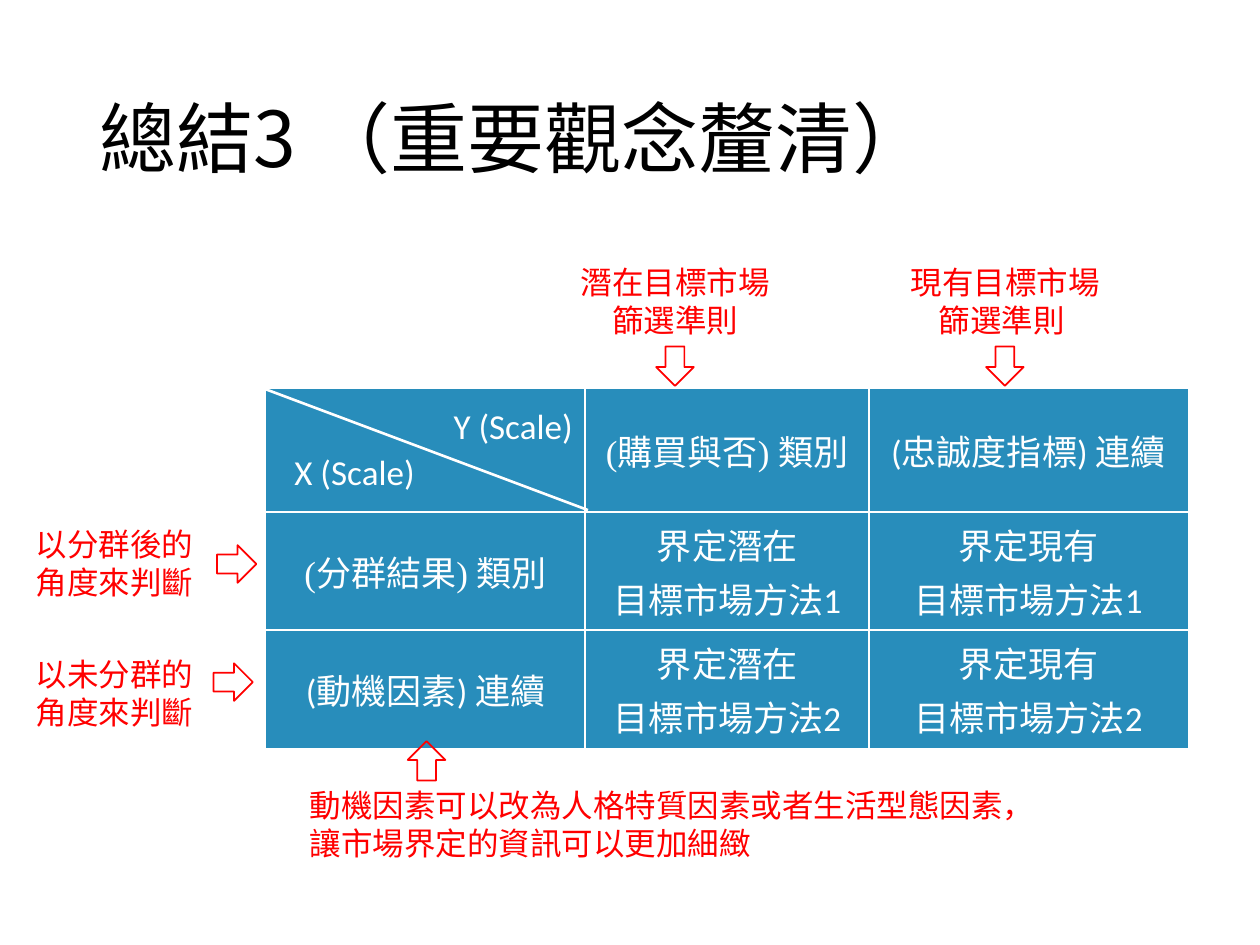
from dataclasses import dataclass

from lxml import etree
from pptx import Presentation
from pptx.dml.color import RGBColor
from pptx.enum import shapes, text
from pptx.oxml import ns
from pptx.util import Pt

RED, WHITE, BLUE = "FF0000", "FFFFFF", "288DBB"
LEFT, CENTER, RIGHT = text.PP_ALIGN.LEFT, text.PP_ALIGN.CENTER, text.PP_ALIGN.RIGHT
TABLE_LEFT, TABLE_TOP = 152, 222.5
COLUMNS = [182.5, 162, 182.5]
ROWS = [70, 67.5, 67.5]


@dataclass
class Note:
    left: float
    top: float
    width: float
    lines: list[str]
    align: text.PP_ALIGN = CENTER


@dataclass
class Arrow:
    left: float
    top: float
    rotation: int = 0


@dataclass
class Entry:
    lines: list[str]
    font: str = "Calibri"


NOTES = [
    Note(170, 445.5, 433, ["動機因素可以改為人格特質因素或者生活型態因素，", "讓市場界定的資訊可以更加細緻"], LEFT),
    Note(512.5, 147, 124, ["現有目標市場", "篩選準則 "]),
    Note(324, 147, 124, ["潛在目標市場", "篩選準則"]),
    Note(13, 296.5, 105, ["以分群後的", "角度來判斷"]),
    Note(13, 371, 105, ["以未分群的", "角度來判斷"]),
]
ARROWS = [
    Arrow(375, 198),
    Arrow(563.5, 198),
    Arrow(124.5, 311, 270),
    Arrow(122.5, 378.5, 270),
    Arrow(233, 423.5, 180),
]
ENTRIES = [
    [Entry(["Y (Scale)", "X (Scale)"]), Entry(["(購買與否) 類別"], "Times New Roman"), Entry(["(忠誠度指標) 連續"])],
    [Entry(["(分群結果) 類別"], "Times New Roman")],
    [Entry(["(動機因素) 連續"])],
]
for number, entry_row in enumerate(ENTRIES[1:], 1):
    for market in ("潛在", "現有"):
        entry_row.append(Entry([f"界定{market}", f"目標市場方法{number}"]))


def color(value: str) -> RGBColor:
    return RGBColor.from_string(value)


def write(para, content: str, *, size: float, fill: str, font: str = "Calibri",
          asian: str = "Noto Sans CJK TC", align=CENTER, before: float = 0) -> None:
    para.alignment = align
    para.space_before = Pt(before)
    span = para.add_run()
    span.text = content
    span.font.name = font
    span.font.size = Pt(size)
    span.font.color.rgb = color(fill)
    span.font._element.find(ns.qn("a:latin")).addnext(
        etree.Element(ns.qn("a:ea"), typeface=asian))


def write_lines(frame, lines: list[str], aligns: list, *, gap: float = 0, **style) -> None:
    for index, (line, align) in enumerate(zip(lines, aligns)):
        para = frame.add_paragraph() if index else frame.paragraphs[0]
        write(para, line, align=align, before=gap if index else 0, **style)


def add_note(page, note: Note) -> None:
    box = page.shapes.add_textbox(Pt(note.left), Pt(note.top), Pt(note.width), Pt(51))
    frame = box.text_frame
    frame.word_wrap = False
    frame.auto_size = text.MSO_AUTO_SIZE.SHAPE_TO_FIT_TEXT
    write_lines(frame, note.lines, [note.align] * len(note.lines), size=18, fill=RED)


def add_arrow(page, arrow: Arrow) -> None:
    shape = page.shapes.add_shape(shapes.MSO_SHAPE.DOWN_ARROW, Pt(arrow.left), Pt(arrow.top),
                                  Pt(21.5), Pt(22.5))
    shape.rotation = arrow.rotation
    shape.shadow.inherit = False
    shape.fill.background()
    shape.line.color.rgb = color(RED)
    shape.line.width = Pt(1)


def add_borders(cell, row: int, column: int) -> None:
    inner = {"L": column > 0, "R": column < len(COLUMNS) - 1,
             "T": row > 0, "B": row < len(ROWS) - 1}
    properties = cell._tc.get_or_add_tcPr()
    for side, shown in inner.items():
        line = etree.SubElement(properties, ns.qn(f"a:ln{side}"), w=str(Pt(1.5)))
        if shown:
            solid = etree.SubElement(line, ns.qn("a:solidFill"))
            etree.SubElement(solid, ns.qn("a:srgbClr"), val=WHITE)
        else:
            etree.SubElement(line, ns.qn("a:noFill"))


def add_matrix(page) -> None:
    frame = page.shapes.add_table(len(ROWS), len(COLUMNS), Pt(TABLE_LEFT), Pt(TABLE_TOP),
                                  Pt(sum(COLUMNS)), Pt(sum(ROWS)))
    table = frame.table
    table.first_row = table.horz_banding = False
    for column, width in zip(table.columns, COLUMNS):
        column.width = Pt(width)
    for row, height in zip(table.rows, ROWS):
        row.height = Pt(height)
    for row, entries in enumerate(ENTRIES):
        for column, entry in enumerate(entries):
            cell = table.cell(row, column)
            add_borders(cell, row, column)
            cell.fill.solid()
            cell.fill.fore_color.rgb = color(BLUE)
            cell.vertical_anchor = text.MSO_ANCHOR.MIDDLE
            aligns = [RIGHT, LEFT] if row == column == 0 else [CENTER, CENTER]
            write_lines(cell.text_frame, entry.lines, aligns, gap=2,
                        size=20, fill=WHITE, font=entry.font)
    scale = table.cell(0, 0).text_frame.paragraphs[1]
    scale._p.get_or_add_pPr().set("marL", str(Pt(9)))


def add_diagonal(page) -> None:
    line = page.shapes.add_connector(shapes.MSO_CONNECTOR.STRAIGHT, Pt(TABLE_LEFT), Pt(TABLE_TOP),
                                     Pt(TABLE_LEFT + 184), Pt(TABLE_TOP + 69))
    line.line.color.rgb = color(WHITE)
    line.line.width = Pt(1.5)
    etree.SubElement(line._element.spPr, ns.qn("a:effectLst"))


def add_title(page) -> None:
    title = page.shapes.title
    title.left, title.top, title.width, title.height = Pt(49.5), Pt(29), Pt(621), Pt(104.5)
    title.text_frame.vertical_anchor = text.MSO_ANCHOR.MIDDLE
    para = title.text_frame.paragraphs[0]
    write(para, "總結3 （重要觀念釐清）", size=44, fill="000000", align=LEFT,
          font="Noto Sans CJK SC", asian="Noto Sans CJK SC")
    para.line_spacing = 0.9


def main() -> None:
    deck = Presentation()
    deck.slide_width, deck.slide_height = Pt(720), Pt(540)
    page = deck.slides.add_slide(deck.slide_layouts[5])
    add_title(page)
    add_matrix(page)
    add_diagonal(page)
    for note in NOTES:
        add_note(page, note)
    for arrow in ARROWS:
        add_arrow(page, arrow)
    deck.save("out.pptx")


if __name__ == "__main__":
    main()
